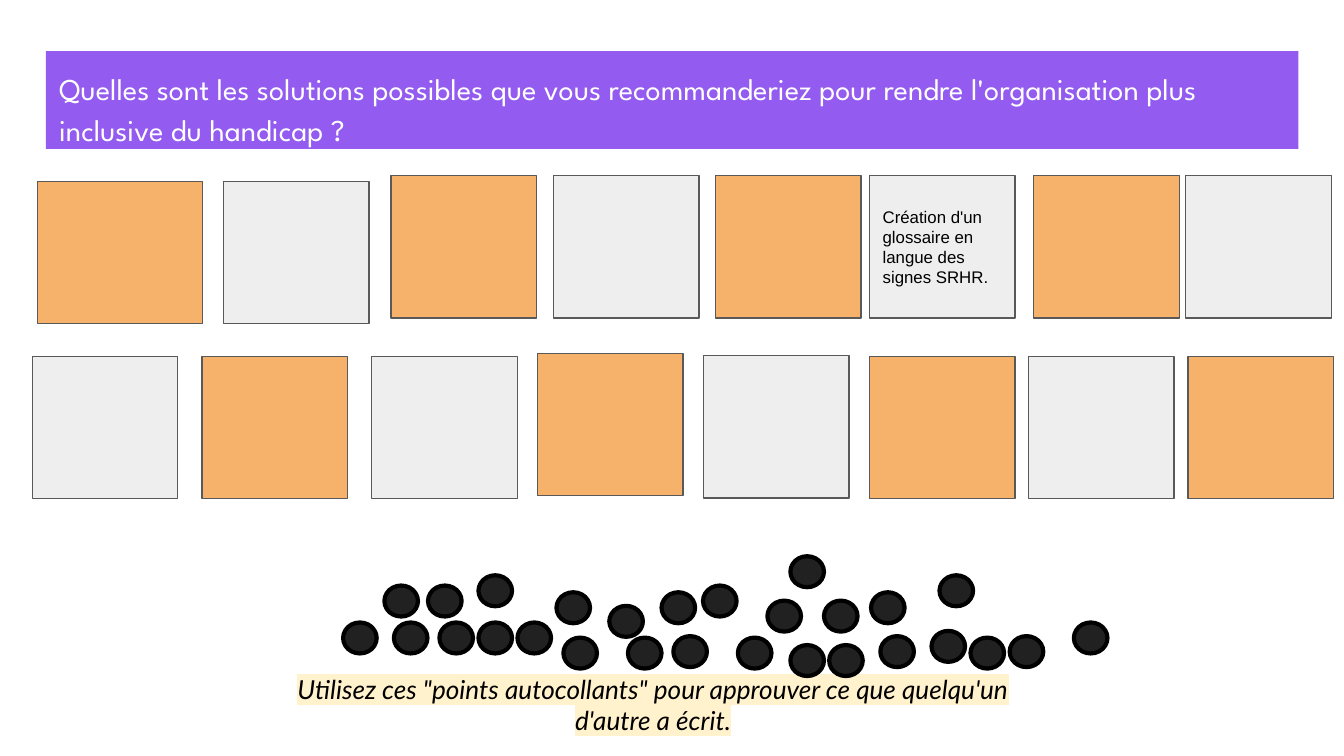
from lxml import etree
from pptx import Presentation
from pptx import util as u
from pptx.dml.color import RGBColor
from pptx.enum import shapes, text
from pptx.oxml.ns import qn

HUES = {
    "violet": "935BEF", "white": "FFFFFF", "black": "000000",
    "orange": "F6B26B", "grey": "EEEEEE", "edge": "595959",
    "dot": "212121", "cream": "FFF2CC",
}


def tint(name):
    return RGBColor.from_string(HUES[name])


class Board:
    """Holds the style and the current slide."""

    pad = 7.2

    def __init__(self, deck):
        self.slide = deck.slides.add_slide(deck.slide_layouts[6])

    def shape(self, kind, box, fill, line=None, width=0.75):
        item = self.slide.shapes.add_shape(kind, *map(u.Pt, box))
        item.shadow.inherit = False
        item.fill.solid()
        item.fill.fore_color.rgb = tint(fill)
        if line:
            item.line.color.rgb = tint(line)
            item.line.width = u.Pt(width)
        else:
            item.line.fill.background()
        return item

    def card(self, box, fill):
        return self.shape(shapes.MSO_SHAPE.RECTANGLE, box, fill, "edge")

    def dot(self, left, top):
        self.shape(shapes.MSO_SHAPE.OVAL, (left, top, 18, 16.6), "dot", "black", 2.25)

    def label(self, box):
        return self.slide.shapes.add_textbox(*map(u.Pt, box))

    def fill_text(self, item, words, size, face, hue="black",
                  align=text.PP_ALIGN.LEFT, anchor=text.MSO_ANCHOR.TOP):
        frame = item.text_frame
        frame.word_wrap = True
        frame.vertical_anchor = anchor
        frame.margin_left = frame.margin_right = u.Pt(self.pad)
        frame.margin_top = frame.margin_bottom = u.Pt(self.pad)
        para = frame.paragraphs[0]
        para.alignment = align
        para.add_run().text = words
        font = para.font
        font.size, font.name = u.Pt(size), face
        font.color.rgb = tint(hue)
        return para

    def mark(self, para, hue):
        for run in para.runs:
            props = run._r.get_or_add_rPr()
            glow = etree.SubElement(props, qn("a:highlight"))
            etree.SubElement(glow, qn("a:srgbClr"), val=HUES[hue])


deck = Presentation()
deck.slide_width, deck.slide_height = u.Pt(720), u.Pt(405)
board = Board(deck)

# Title band
band = board.shape(shapes.MSO_SHAPE.RECTANGLE, (24.6, 27.4, 671, 52.4), "violet")
para = board.fill_text(
    band,
    "Quelles sont les solutions possibles que vous recommanderiez "
    "pour rendre l'organisation plus inclusive du handicap ?",
    16.2, "League Spartan", "white")
para.line_spacing = 1.15

# Caption
note = board.label((149.8, 353.5, 400.3, 38.9))
para = board.fill_text(
    note,
    "Utilisez ces \"points autocollants\" pour approuver "
    "ce que quelqu'un d'autre a écrit.",
    14, "Lato", align=text.PP_ALIGN.CENTER)
para.font.italic = True
board.mark(para, "cream")

# Cards: (left, top) per row, colours alternate like a chessboard
WIDE, SIDE, TALL = 88.4, 78, 76.2
ROWS = [
    [(20.2, 97.3), (119.7, 97.3), (209.4, 94.2), (296.5, 94.2),
     (383.3, 94.2), (465.8, 94.2), (553.8, 94.2), (635.2, 94.2)],
    [(17.3, 191), (108.2, 191), (199.2, 191), (288, 189.3),
     (376.8, 190.6), (465.8, 191), (551, 191), (636.4, 191)],
]
cards = {}
for row, spots in enumerate(ROWS):
    for col, (left, top) in enumerate(spots):
        wide = WIDE if (row, col) == (0, 0) else SIDE
        fill = ("orange", "grey")[(row + col) % 2]
        cards[row, col] = board.card((left, top, wide, TALL), fill)

board.fill_text(cards[0, 5], "Création d'un glossaire en langue des signes SRHR.",
                9, "Arial", anchor=text.MSO_ANCHOR.MIDDLE)

# Sticker dots: lefts grouped by top
DOTS = {
    298: [423.4],
    308.2: [256.3, 503.3],
    313.7: [205.9, 229.3, 376.6],
    317.3: [298.1, 354.4, 466.6],
    321.8: [411.1, 441.4],
    324.6: [326.4],
    333.5: [183.8, 211, 235.4, 256.3, 277.2, 575.3],
    338: [499],
    340.8: [360.7, 471.6, 540.9],
    341.6: [301.8, 336.4, 395.3, 519.9],
    345.6: [423.4, 444.2],
}
for top, lefts in DOTS.items():
    for left in lefts:
        board.dot(left, top)

deck.save("out.pptx")
